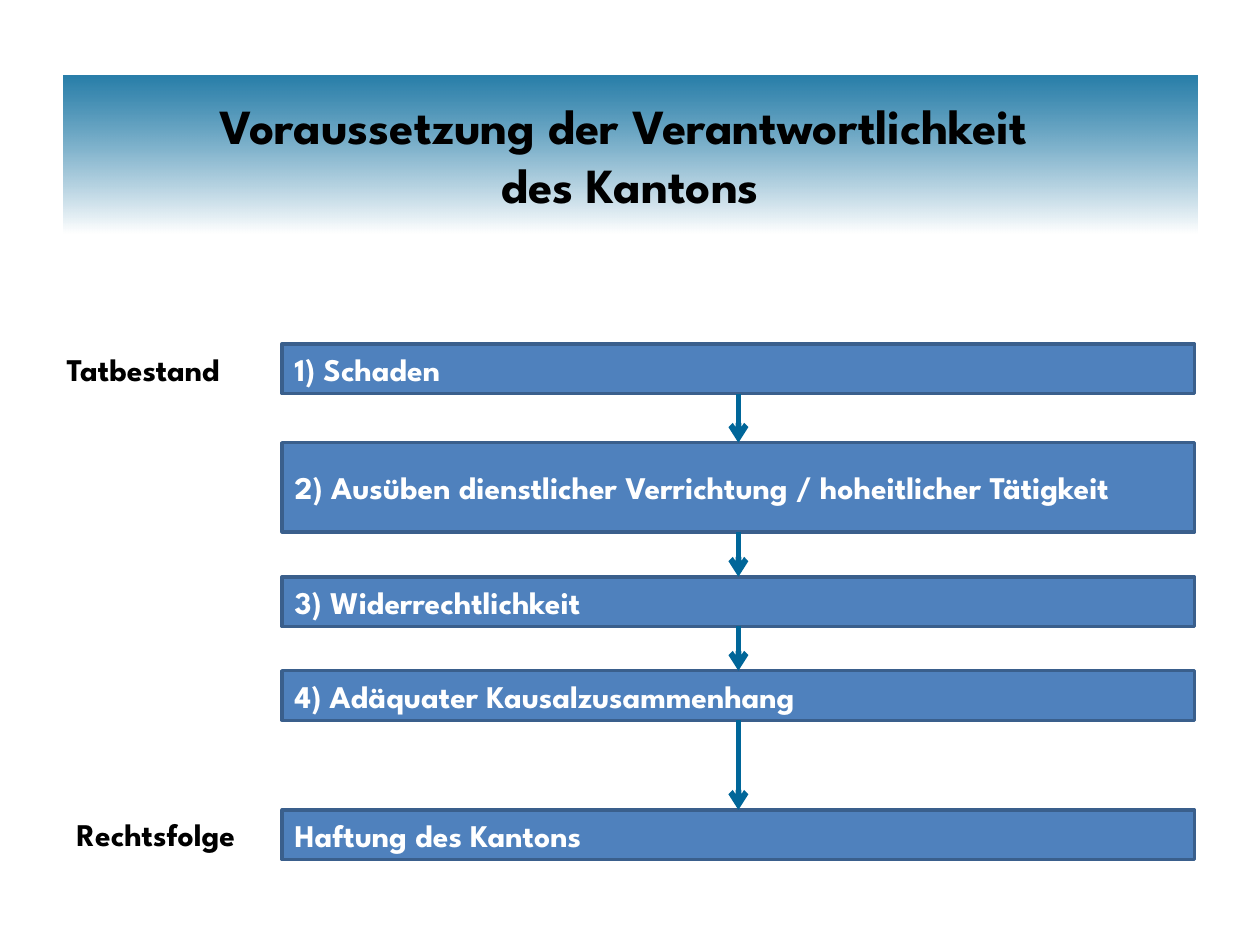
import dataclasses
import itertools

import pptx
import pptx.dml.color
import pptx.enum.shapes
import pptx.enum.text
import pptx.oxml
import pptx.oxml.ns
import pptx.util

Pt = pptx.util.Pt
RGB = pptx.dml.color.RGBColor.from_string
ANCHOR = pptx.enum.text.MSO_ANCHOR
ALIGN = pptx.enum.text.PP_ALIGN
qn = pptx.oxml.ns.qn
NS = pptx.oxml.ns.nsdecls("a")


@dataclasses.dataclass(frozen=True)
class Theme:
    font: str = "League Spartan"
    title_size: float = 28
    body_size: float = 18
    text: str = "000000"
    box_text: str = "FFFFFF"
    box_fill: str = "4F81BD"
    box_line: str = "3A5F8C"
    box_line_width: float = 2
    accent: str = "006699"
    fade: str = "FFFFFF"
    arrow_width: float = 3.25


class Deck:
    def __init__(self, prs, theme):
        self.theme = theme
        self.slide = prs.slides.add_slide(prs.slide_layouts[5])

    def style(self, p, size, color, align=ALIGN.LEFT):
        p.alignment = align
        p.font.name = self.theme.font
        p.font.size = Pt(size)
        p.font.bold = True
        p.font.color.rgb = RGB(color)

    def title(self, lines, left, top, width, height):
        s = self.slide.shapes.title
        s.left, s.top, s.width, s.height = Pt(left), Pt(top), Pt(width), Pt(height)
        s.fill.gradient()
        s.fill.gradient_angle = 270
        stops = s.fill.gradient_stops
        for stop, color, position in zip(stops, (self.theme.accent, self.theme.fade), (0, 1)):
            stop.color.rgb = RGB(color)
            stop.position = position
        start = next(s._element.spPr.iter(qn("a:srgbClr")))
        start.append(pptx.oxml.parse_xml(f'<a:alpha {NS} val="84000"/>'))
        tf = s.text_frame
        tf.auto_size = pptx.enum.text.MSO_AUTO_SIZE.NONE
        tf.vertical_anchor = ANCHOR.MIDDLE
        p = tf.paragraphs[0]
        for i, line in enumerate(lines):
            if i:
                p.add_line_break()
            p.add_run().text = line
        self.style(p, self.theme.title_size, self.theme.text, ALIGN.CENTER)

    def label(self, text, left, top, width, height):
        s = self.slide.shapes.add_textbox(Pt(left), Pt(top), Pt(width), Pt(height))
        tf = s.text_frame
        tf.word_wrap = True
        tf.text = text
        self.style(tf.paragraphs[0], self.theme.body_size, self.theme.text)

    def box(self, text, left, top, width, height):
        s = self.slide.shapes.add_shape(
            pptx.enum.shapes.MSO_SHAPE.RECTANGLE, Pt(left), Pt(top), Pt(width), Pt(height)
        )
        s.shadow.inherit = False
        s.fill.solid()
        s.fill.fore_color.rgb = RGB(self.theme.box_fill)
        s.line.color.rgb = RGB(self.theme.box_line)
        s.line.width = Pt(self.theme.box_line_width)
        tf = s.text_frame
        tf.word_wrap = True
        tf.vertical_anchor = ANCHOR.MIDDLE
        tf.text = text
        self.style(tf.paragraphs[0], self.theme.body_size, self.theme.box_text)

    def arrow(self, x, top, bottom):
        s = self.slide.shapes.add_connector(
            pptx.enum.shapes.MSO_CONNECTOR.STRAIGHT, Pt(x), Pt(top), Pt(x), Pt(bottom)
        )
        s.line.color.rgb = RGB(self.theme.accent)
        s.line.width = Pt(self.theme.arrow_width)
        s.line._get_or_add_ln().append(pptx.oxml.parse_xml(f'<a:tailEnd {NS} type="arrow"/>'))
        s._element.spPr.append(pptx.oxml.parse_xml(f"<a:effectLst {NS}/>"))


def main():
    prs = pptx.Presentation()
    prs.slide_width, prs.slide_height = Pt(720), Pt(540)
    deck = Deck(prs, Theme())
    deck.title(("Voraussetzung der Verantwortlichkeit ", "des Kantons"), 36, 43.2, 648, 90)

    left, width = 161.3, 521.3
    steps = (
        ("1) Schaden", 196.5, 28.4),
        ("2) Ausüben dienstlicher Verrichtung / hoheitlicher Tätigkeit", 253, 51),
        ("3) Widerrechtlichkeit", 329.6, 28.4),
        ("4) Adäquater Kausalzusammenhang", 383.3, 28.4),
        ("Haftung des Kantons", 462.8, 28.4),
    )
    for text, top, height in steps:
        deck.box(text, left, top, width, height)
    for (_, top, height), (_, next_top, _) in itertools.pairwise(steps):
        deck.arrow(left + width / 2, top + height, next_top)

    deck.label("Tatbestand", 31, 196.6, 142, 29)
    deck.label("Rechtsfolge", 36.7, 462.2, 142, 29)
    prs.save("out.pptx")


if __name__ == "__main__":
    main()
